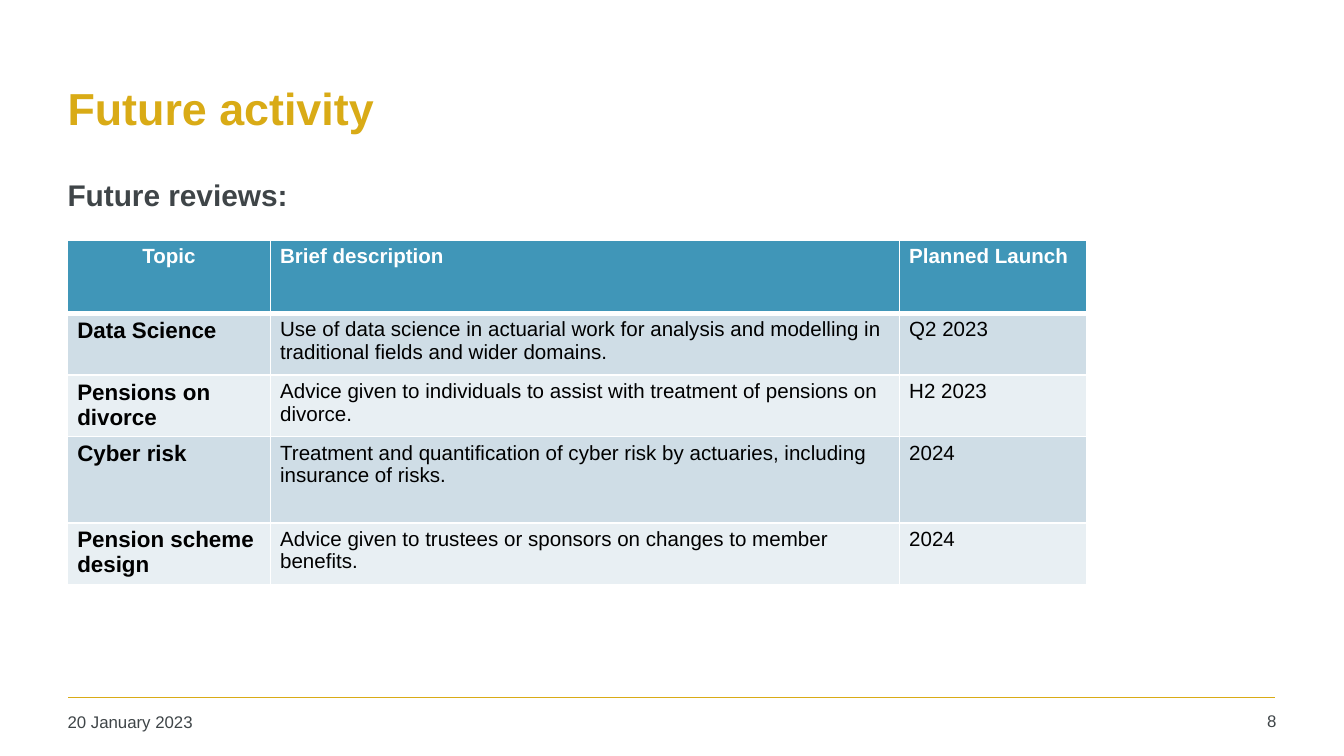
import dataclasses
import pptx
import pptx.dml.color
import pptx.enum.text
import pptx.oxml
import pptx.oxml.ns
import pptx.util

Pt = pptx.util.Pt
Align = pptx.enum.text.PP_ALIGN
Anchor = pptx.enum.text.MSO_ANCHOR
GOLD, GREY, WHITE, BLACK = "D9AB16", "3F4548", "FFFFFF", "000000"
BLUE, BANDS = "4096B8", ("CFDDE6", "E8EFF3")
PAD_X, PAD_Y = 5.2, 2.6


@dataclasses.dataclass
class Box:
    left: float
    top: float
    width: float
    height: float

    def points(self) -> list:
        return [Pt(v) for v in (self.left, self.top, self.width, self.height)]


@dataclasses.dataclass
class Review:
    topic: str
    brief: str
    launch: str
    height: float = 33.1


HEAD = Review("Topic", "Brief description", "Planned Launch", 38.9)
REVIEWS = [
    Review("Data Science", "Use of data science in actuarial work for analysis and "
           "modelling in traditional fields and wider domains.", "Q2 2023"),
    Review("Pensions on divorce", "Advice given to individuals to assist with "
           "treatment of pensions on divorce.", "H2 2023"),
    Review("Cyber risk", "Treatment and quantification of cyber risk by actuaries, "
           "including insurance of risks.", "2024", 46.1),
    Review("Pension scheme design", "Advice given to trustees or sponsors on "
           "changes to member benefits.", "2024"),
]
WIDTHS = (108.7, 337, 100.1)


def paint(code: str):
    return pptx.dml.color.RGBColor.from_string(code)


def write(frame, text: str, *, size: float, color: str = GREY,
          bold: bool = False, align=Align.LEFT) -> None:
    para = frame.paragraphs[0]
    para.alignment = align
    run = para.add_run()
    run.text = text
    run.font.name = "Arial"
    run.font.size = Pt(size)
    run.font.bold = bold
    run.font.color.rgb = paint(color)


def inset(frame, anchor=Anchor.TOP) -> None:
    frame.word_wrap = True
    frame.auto_size = pptx.enum.text.MSO_AUTO_SIZE.NONE
    frame.vertical_anchor = anchor
    frame.margin_left = frame.margin_right = Pt(PAD_X)
    frame.margin_top = frame.margin_bottom = Pt(PAD_Y)


def label(slide, box: Box, text: str, **style) -> None:
    frame = slide.shapes.add_textbox(*box.points()).text_frame
    inset(frame)
    write(frame, text, **style)


def edge(cell, top: float, base: float) -> None:
    """Give the cell white borders; top and base are line widths."""
    props = cell._tc.get_or_add_tcPr()
    for side, width in (("L", 1), ("R", 1), ("T", top), ("B", base)):
        props.append(pptx.oxml.parse_xml(
            f'<a:ln{side} {pptx.oxml.ns.nsdecls("a")} w="{Pt(width)}"><a:solidFill>'
            f'<a:srgbClr val="{WHITE}"/></a:solidFill></a:ln{side}>'))


def fill(cell, text: str, back: str, top: float, base: float, **style) -> None:
    cell.margin_left = cell.margin_right = Pt(PAD_X)
    cell.margin_top = cell.margin_bottom = Pt(PAD_Y)
    edge(cell, top, base)
    cell.fill.solid()
    cell.fill.fore_color.rgb = paint(back)
    write(cell.text_frame, text, **style)


def grid(slide, left: float, top: float) -> None:
    rows = [HEAD, *REVIEWS]
    box = Box(left, top, sum(WIDTHS), sum(row.height for row in rows))
    table = slide.shapes.add_table(len(rows), len(WIDTHS), *box.points()).table
    for col, width in zip(table.columns, WIDTHS):
        col.width = Pt(width)
    for i, row in enumerate(rows):
        table.rows[i].height = Pt(row.height)
        head = i == 0
        back = BLUE if head else BANDS[(i - 1) % 2]
        for j, text in enumerate((row.topic, row.brief, row.launch)):
            first = j == 0
            fill(table.cell(i, j), text, back,
                 top=3 if i == 1 else 1, base=3 if head else 1,
                 size=12 if first and not head else 11,
                 color=WHITE if head else BLACK, bold=head or first,
                 align=Align.CENTER if head and first else Align.LEFT)


def rule(slide, left: float, right: float, y: float) -> None:
    line = slide.shapes.add_connector(
        pptx.enum.shapes.MSO_CONNECTOR.STRAIGHT, Pt(left), Pt(y), Pt(right), Pt(y))
    line.line.color.rgb = paint(GOLD)
    line.line.width = Pt(1)
    line._element.spPr.append(pptx.oxml.parse_xml(
        f'<a:effectLst {pptx.oxml.ns.nsdecls("a")}/>'))


def main() -> None:
    deck = pptx.Presentation()
    deck.slide_width, deck.slide_height = Pt(720), Pt(405)
    slide = deck.slides.add_slide(deck.slide_layouts[5])

    title = slide.shapes.title
    title.left, title.top, title.width, title.height = Box(31, 23.8, 653, 67.7).points()
    inset(title.text_frame, Anchor.MIDDLE)
    write(title.text_frame, "Future activity", size=24, color=GOLD, bold=True)

    rule(slide, 36.7, 683.3, 373.7)
    label(slide, Box(31, 378.7, 158.4, 19.4), "20 January 2023", size=9)
    label(slide, Box(637.9, 378, 51.1, 20.2), "8", size=9, align=Align.RIGHT)
    label(slide, Box(31, 92.2, 653, 274.3), "Future reviews:", size=16, bold=True)
    grid(slide, 36.2, 128.9)
    deck.save("out.pptx")


if __name__ == "__main__":
    main()
